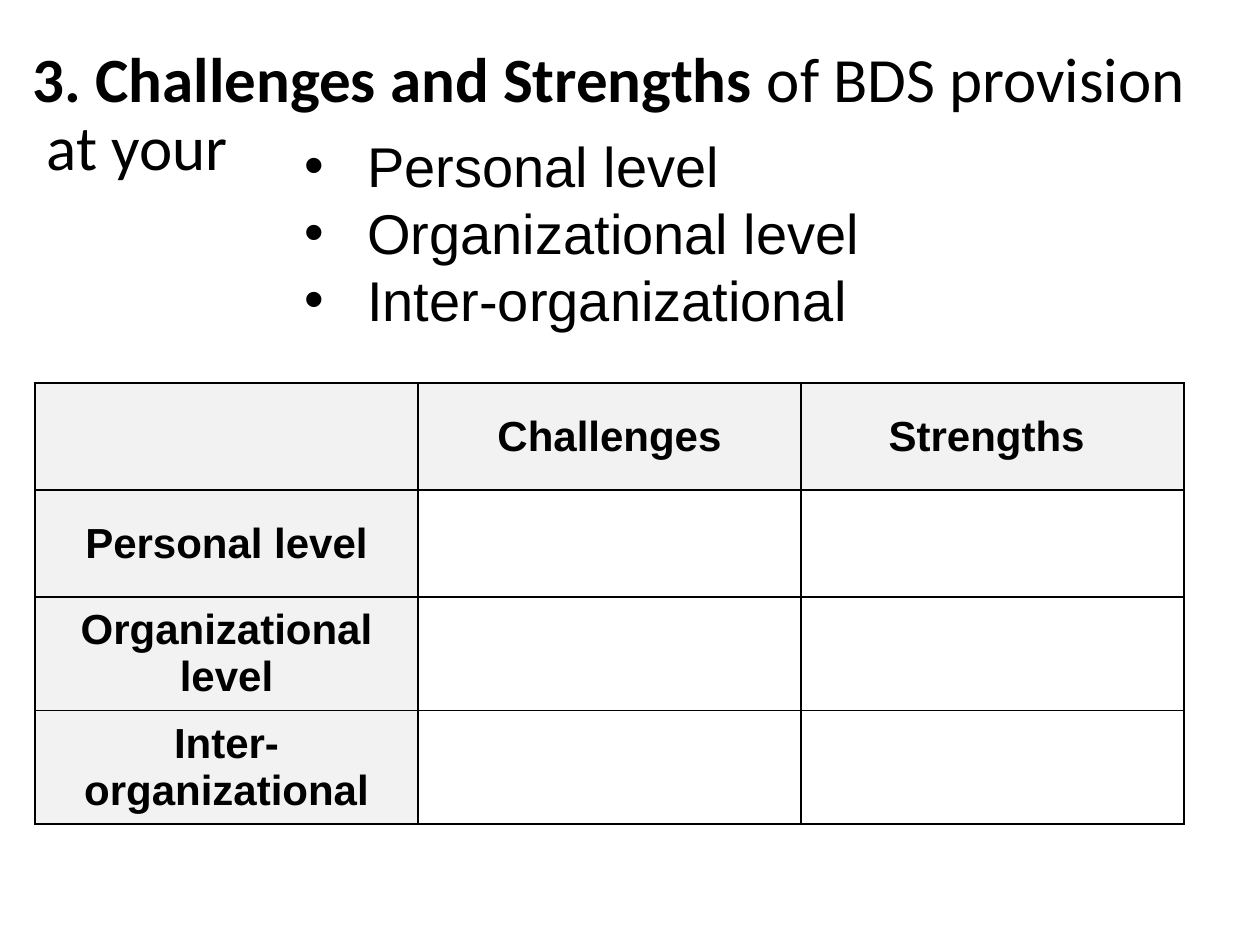
import copy

import pptx
import pptx.dml.color
import pptx.enum.text
import pptx.oxml
import pptx.oxml.ns
import pptx.util

RGB = pptx.dml.color.RGBColor
BLACK = RGB(0x00, 0x00, 0x00)
WHITE = RGB(0xFF, 0xFF, 0xFF)
GREY = RGB(0xF2, 0xF2, 0xF2)

ALIGN = pptx.enum.text.PP_ALIGN
MIDDLE = pptx.enum.text.MSO_ANCHOR.MIDDLE
FIT = pptx.enum.text.MSO_AUTO_SIZE

LEVELS = ["Personal level", "Organizational level", "Inter-organizational"]
GRID = [["", "Challenges", "Strengths "]] + [[level, "", ""] for level in LEVELS]


def px(count):
    return pptx.util.Emu(round(count * 914400 / 126))


def put(para, text, font="Arial", size=24, bold=False, color=BLACK):
    """Add text to a paragraph; each newline becomes a line break."""
    for i, line in enumerate(text.split("\n")):
        if i:
            para.add_line_break()
            para._p[-1].append(copy.deepcopy(run._r.rPr))
        run = para.add_run()
        run.text = line
        run.font.name = font
        run.font.size = pptx.util.Pt(size)
        run.font.bold = bold
        run.font.color.rgb = color


def edge(cell, color=BLACK, width=1):
    """Draw all four borders of a table cell, ahead of its fill."""
    props = cell._tc.get_or_add_tcPr()
    for i, side in enumerate(("lnL", "lnR", "lnT", "lnB")):
        line = pptx.oxml.parse_xml(
            f'<a:{side} {pptx.oxml.ns.nsdecls("a")} w="{pptx.util.Pt(width)}">'
            f'<a:solidFill><a:srgbClr val="{color}"/></a:solidFill></a:{side}>'
        )
        props.insert(i, line)


class Page:
    """Holds the text style and the current slide."""

    def __init__(self, deck, head="Calibri", body="Arial"):
        self.head = head
        self.body = body
        self.slide = deck.slides.add_slide(deck.slide_layouts[5])

    def title(self, left, top, width, height, parts):
        shape = self.slide.shapes.title
        shape.left, shape.top = px(left), px(top)
        shape.width, shape.height = px(width), px(height)
        frame = shape.text_frame
        frame.auto_size = FIT.NONE
        frame.vertical_anchor = MIDDLE
        para = frame.paragraphs[0]
        para.alignment = ALIGN.LEFT
        para.line_spacing = 0.9
        for text, bold in parts:
            put(para, text, font=self.head, size=36, bold=bold)

    def bullets(self, left, top, width, height, items, indent=63):
        box = self.slide.shapes.add_textbox(px(left), px(top), px(width), px(height))
        frame = box.text_frame
        frame.word_wrap = True
        frame.auto_size = FIT.SHAPE_TO_FIT_TEXT
        for i, item in enumerate(items):
            para = frame.add_paragraph() if i else frame.paragraphs[0]
            props = para._p.get_or_add_pPr()
            props.set("marL", str(px(indent)))
            props.set("indent", str(-px(indent)))
            for tag, key, value in (("buFont", "typeface", self.body),
                                    ("buChar", "char", "•")):
                mark = props.makeelement(pptx.oxml.ns.qn(f"a:{tag}"), {key: value})
                props.append(mark)
            put(para, item, font=self.body, size=32)

    def table(self, left, top, col, row, grid):
        """Draw a grid whose first row and first column are shaded."""
        rows, cols = len(grid), len(grid[0])
        table = self.slide.shapes.add_table(
            rows, cols, px(left), px(top), px(col * cols), px(row * rows)).table
        for column in table.columns:
            column.width = px(col)
        for r, texts in enumerate(grid):
            table.rows[r].height = px(row)
            for c, text in enumerate(texts):
                cell = table.cell(r, c)
                cell.fill.solid()
                cell.fill.fore_color.rgb = WHITE if r and c else GREY
                edge(cell)
                cell.vertical_anchor = MIDDLE
                if text:
                    para = cell.text_frame.paragraphs[0]
                    para.alignment = ALIGN.CENTER
                    put(para, text, font=self.body, bold=True)


def main():
    deck = pptx.Presentation()
    deck.slide_width, deck.slide_height = px(1260), px(945)
    page = Page(deck)
    page.title(20, 37, 1240, 159, [
        ("3. Challenges and Strengths ", True),
        ("of BDS provision\n at your", False),
    ])
    page.bullets(292, 125, 779, 217, LEVELS)
    page.table(35, 383, 383, 107, GRID)
    deck.save("out.pptx")


if __name__ == "__main__":
    main()
